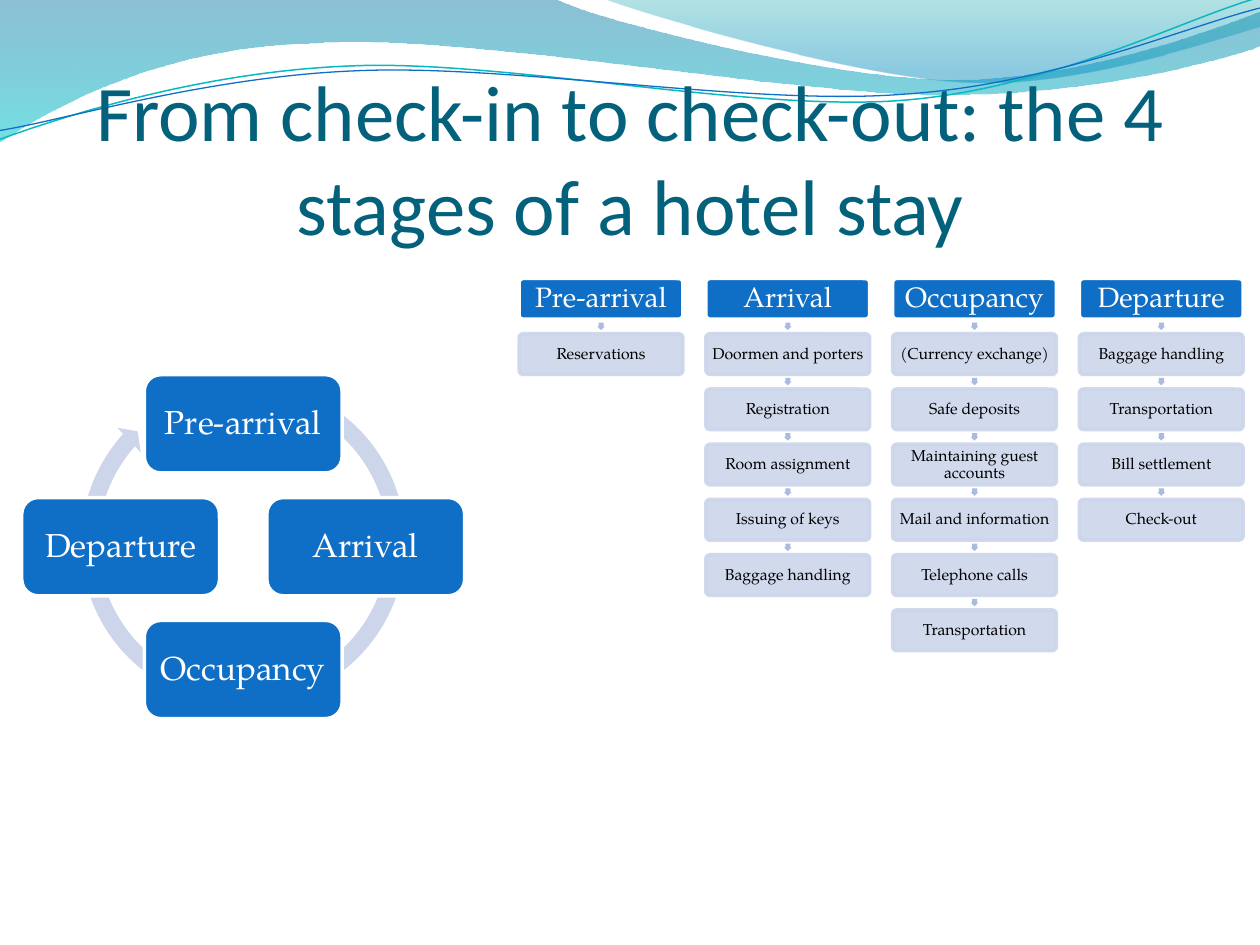
from lxml import etree
from pptx import Presentation, util as u
from pptx.dml import color
from pptx.enum import shapes, text
from pptx.oxml import ns

SIZE = u.Inches(10), u.Inches(7.5)
KIND = shapes.MSO_SHAPE
SERIF = "TeX Gyre Pagella"
BLUE, PALE, WHITE = "0F6FC6", "CCD5EA", "FFFFFF"
STAGES = {
    "Pre-arrival": ["Reservations"],
    "Arrival": ["Doormen and porters", "Registration", "Room assignment",
                "Issuing of keys", "Baggage handling"],
    "Occupancy": ["(Currency exchange)", "Safe deposits",
                  "Maintaining guest accounts", "Mail and information",
                  "Telephone calls", "Transportation"],
    "Departure": ["Baggage handling", "Transportation", "Bill settlement",
                  "Check-out"],
}
BANDS = [
    ([(0, 0), (4.4, -0.01),
      (4.76, 0.17, 6.64, 0.63, 7.58, 0.63), (8.53, 0.63, 9.58, 0.26, 10, 0.09),
      (10.01, 0.36),
      (9.83, 0.44, 8.7, 0.76, 7.46, 0.75), (6.22, 0.75, 3.82, 0.28, 2.57, 0.34),
      (1.29, 0.36, 0.46, 0.83, -0.01, 1.13), (0, 0)],
     [(0, "0074A1", 45), (1, "00C6CF", 55)]),
    ([(4.79, -0.01),
      (5.09, 0.11, 6.82, 0.62, 7.69, 0.65), (8.56, 0.69, 9.61, 0.32, 10, 0.21),
      (10, 0), (4.79, -0.01)],
     [(0, "00A1A9", 30), (0.8, "008BBF", 45)]),
]
LINES = [
    ([(-0.02, 0.87),
      (0.47, 0.72, 1.58, 0.41, 2.78, 0.42), (3.96, 0.42, 5.91, 0.93, 7.12, 0.9),
      (8.32, 0.87, 9.4, 0.36, 10, 0.22)], "0AB8BF", 0.85),
    ([(-0.02, 0.8),
      (0.46, 0.75, 1.64, 0.45, 2.83, 0.46), (4.03, 0.46, 5.96, 0.89, 7.16, 0.85),
      (8.35, 0.83, 9.42, 0.42, 10.02, 0.3)], BLUE, 0.75),
]


def rgb(code):
    return color.RGBColor.from_string(code)


def put(obj, vals):
    for name, val in vals.items():
        setattr(obj, name, val)


def emu(box):
    return [int(part * SIZE[i % 2] / 100) for i, part in enumerate(box)]


def fade(node, share):
    etree.SubElement(node, ns.qn("a:alpha"), val=str(share * 1000))


def write(shape, words, size, font, tint, pad, anchor="MIDDLE", lead=0.9):
    frame = shape.text_frame
    side, edge = pad
    put(frame, {"word_wrap": True, "vertical_anchor": text.MSO_ANCHOR[anchor],
                "margin_left": u.Inches(side), "margin_right": u.Inches(side),
                "margin_top": u.Inches(edge[0]),
                "margin_bottom": u.Inches(edge[1])})
    para = frame.paragraphs[0]
    put(para, {"alignment": text.PP_ALIGN.CENTER, "line_spacing": lead})
    run = para.add_run()
    run.text = words
    put(run.font, {"size": u.Pt(size), "name": font})
    run.font.color.rgb = rgb(tint)


def form(slide, kind, box, fill, edge=None, adj=(), alpha=None):
    shape = slide.shapes.add_shape(kind, *emu(box))
    shape.shadow.inherit = False
    shape.fill.solid()
    shape.fill.fore_color.rgb = rgb(fill)
    if edge:
        shape.line.color.rgb = rgb(edge)
        shape.line.width = u.Pt(2)
    else:
        shape.line.fill.background()
    for i, val in enumerate(adj):
        shape.adjustments[i] = val
    if alpha:
        for node in shape.element.spPr.iter(ns.qn("a:srgbClr")):
            fade(node, alpha)
    return shape


def trace(slide, box, steps, close):
    left, top, wide, high = emu(box)
    spots = [(left + x * wide / 10, top + y * high / 7.5)
             for step in steps for x, y in zip(step[::2], step[1::2])]
    pen = slide.shapes.build_freeform(*spots[0])
    pen.add_line_segments(spots[1:], close=close)
    shape = pen.convert_to_shape()
    shape.shadow.inherit = False
    legs = iter(list(shape.element.spPr.iter(ns.qn("a:lnTo"))))
    for step in steps[1:]:
        leg = next(legs)
        if len(step) == 6:
            leg.tag = ns.qn("a:cubicBezTo")
            for extra in (next(legs), next(legs)):
                leg.append(extra[0])
                extra.getparent().remove(extra)
    return shape


def waves(slide, box):
    for steps, stops in BANDS:
        shape = trace(slide, box, steps, True)
        shape.line.fill.background()
        shape.fill.gradient()
        shape.fill.gradient_angle = 270
        for stop, (spot, tint, _) in zip(shape.fill.gradient_stops, stops):
            stop.position = spot
            stop.color.rgb = rgb(tint)
        nodes = shape.element.spPr.iter(ns.qn("a:srgbClr"))
        for node, stop in zip(list(nodes), stops):
            fade(node, stop[2])
    for steps, tint, width in LINES:
        shape = trace(slide, box, steps, False)
        shape.rotation = 357.3
        shape.fill.background()
        shape.line.color.rgb = rgb(tint)
        shape.line.width = u.Pt(width)


def title(slide, box):
    shape = slide.shapes.add_textbox(*emu(box))
    write(shape, "From check-in to check-out: the 4 stages of a hotel stay",
          45, "Calibri", "04617B", (0, (0.05, 0)), "BOTTOM", 1)


def cycle(slide, box):
    left, top, wide, high = box
    node_w, node_h = 15.7, 10.4
    ring_w, ring_h = 27.1, 36.13
    mid_x, mid_y = left + wide / 2, top + high / 2
    form(slide, KIND.CIRCULAR_ARROW,
         (mid_x - ring_w / 2, mid_y - ring_h / 2 - 0.4, ring_w, ring_h),
         PALE, adj=(0.05, 2.73, 133.2, 177.07, 0.05))
    turns = (0, -1), (1, 0), (0, 1), (-1, 0)
    for name, (dx, dy) in zip(STAGES, turns):
        x = mid_x + dx * (wide - node_w) / 2 - node_w / 2
        y = mid_y + dy * (high - node_h) / 2 - node_h / 2
        node = form(slide, KIND.ROUNDED_RECTANGLE, (x, y, node_w, node_h),
                    BLUE, WHITE)
        write(node, name, 19, SERIF, WHITE, (0.08, (0.08, 0.08)))


def lists(slide, box):
    left, top, wide, high = box
    cell_w, cell_h = 13, 4.3
    tip_w, tip_h = 0.6, 0.8
    col = (wide - cell_w) / (len(STAGES) - 1)
    row = (high - cell_h) / max(map(len, STAGES.values()))
    for i, (name, items) in enumerate(STAGES.items()):
        x = left + i * col
        head = form(slide, KIND.ROUNDED_RECTANGLE, (x, top, cell_w, cell_h),
                    BLUE, WHITE, (0.1,))
        write(head, name, 16, SERIF, WHITE, (0.02, (0.02, 0.02)))
        for j, item in enumerate(items, 1):
            y = top + j * row
            gap = y - (row - cell_h) / 2
            tip = form(slide, KIND.RIGHT_ARROW,
                       (x + (cell_w - tip_w) / 2, gap - tip_h / 2, tip_w, tip_h),
                       "ABBBDF", adj=(0.67, 0.5))
            tip.rotation = 90
            cell = form(slide, KIND.ROUNDED_RECTANGLE, (x, y, cell_w, cell_h),
                        PALE, PALE, (0.1,), 90)
            write(cell, item, 9, SERIF, "000000", (0.01, (0.01, 0.01)))


def main():
    deck = Presentation()
    put(deck, {"slide_width": SIZE[0], "slide_height": SIZE[1]})
    slide = deck.slides.add_slide(deck.slide_layouts[6])
    waves(slide, (0, 0, 100, 100))
    title(slide, (0, 9.93, 100, 16.67))
    cycle(slide, (1.73, 39.65, 35.15, 36.4))
    lists(slide, (41.2, 29.47, 57.47, 39.38))
    deck.save("out.pptx")


if __name__ == "__main__":
    main()
